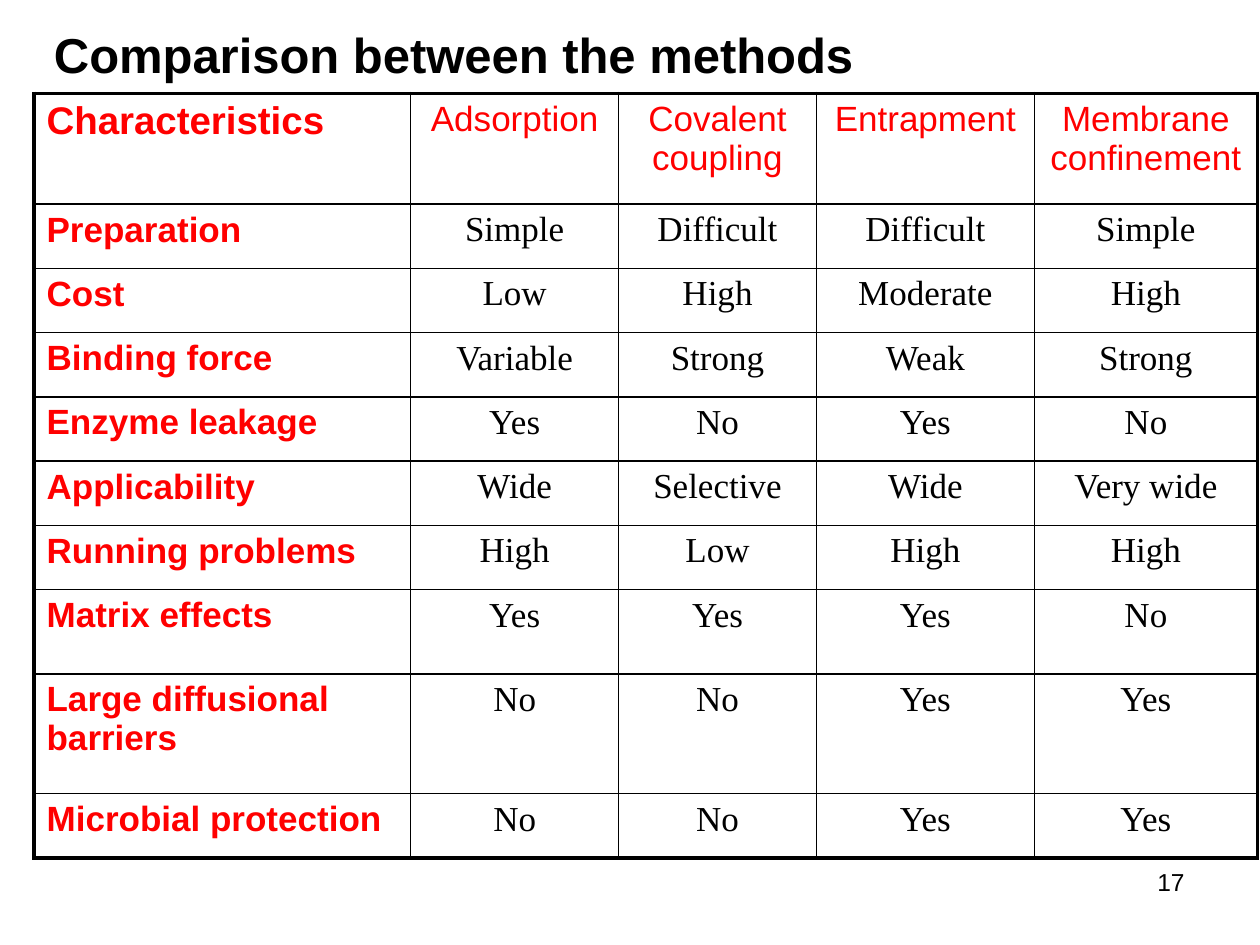
from dataclasses import dataclass

from lxml.etree import SubElement
from pptx import Presentation
from pptx.dml.color import RGBColor
from pptx.enum.text import PP_ALIGN
from pptx.oxml.ns import qn
from pptx.util import Inches, Pt


@dataclass(frozen=True)
class Style:
    font: str
    size: int
    color: str
    bold: bool = False
    align: PP_ALIGN = PP_ALIGN.LEFT


@dataclass(frozen=True)
class Theme:
    title: Style = Style("Arial", 28, "000000", True)
    corner: Style = Style("Arial", 22, "FF0000", True)
    method: Style = Style("Arial", 20, "FF0000", align=PP_ALIGN.CENTER)
    trait: Style = Style("Arial", 20, "FF0000", True)
    value: Style = Style("Times New Roman", 20, "000000", align=PP_ALIGN.CENTER)
    number: Style = Style("Arial", 14, "000000", align=PP_ALIGN.RIGHT)
    paper: str = "FFFFFF"
    rule: str = "000000"
    inner: float = 1
    outer: float = 2.25


@dataclass(frozen=True)
class Box:
    col: int
    row: int
    cols: int
    rows: int


@dataclass(frozen=True)
class Row:
    height: int
    trait: str
    values: tuple[str, ...]


THEME = Theme()
GRID_COLS, GRID_ROWS = 1000, 750
COL_WIDTHS = (299, 165, 157, 173, 177)
ROWS = (
    Row(88, "Characteristics",
        ("Adsorption", "Covalent coupling", "Entrapment", "Membrane confinement")),
    Row(51, "Preparation", ("Simple", "Difficult", "Difficult", "Simple")),
    Row(51, "Cost", ("Low", "High", "Moderate", "High")),
    Row(51, "Binding force", ("Variable", "Strong", "Weak", "Strong")),
    Row(51, "Enzyme leakage", ("Yes", "No", "Yes", "No")),
    Row(51, "Applicability", ("Wide", "Selective", "Wide", "Very wide")),
    Row(51, "Running problems", ("High", "Low", "High", "High")),
    Row(67, "Matrix effects", ("Yes", "Yes", "Yes", "No")),
    Row(95, "Large diffusional barriers", ("No", "No", "Yes", "Yes")),
    Row(51, "Microbial protection", ("No", "No", "Yes", "Yes")),
)

prs = Presentation()
prs.slide_width, prs.slide_height = Inches(10), Inches(7.5)


def across(cols: int) -> int:
    return prs.slide_width * cols // GRID_COLS


def down(rows: int) -> int:
    return prs.slide_height * rows // GRID_ROWS


def place(box: Box) -> tuple[int, int, int, int]:
    return across(box.col), down(box.row), across(box.cols), down(box.rows)


def write(tf, text: str, style: Style, spacing: float = 1.0) -> None:
    p = tf.paragraphs[0]
    p.alignment = style.align
    p.line_spacing = spacing
    r = p.add_run()
    r.text = text
    r.font.name = style.font
    r.font.size = Pt(style.size)
    r.font.bold = style.bold
    r.font.color.rgb = RGBColor.from_string(style.color)


def add_text(s, box: Box, text: str, style: Style, spacing: float = 1.0) -> None:
    tf = s.shapes.add_textbox(*place(box)).text_frame
    tf.word_wrap = True
    write(tf, text, style, spacing)


def set_borders(cell, edges: dict[str, bool]) -> None:
    tc_pr = cell._tc.get_or_add_tcPr()
    for tag, is_outer in edges.items():
        width = THEME.outer if is_outer else THEME.inner
        ln = SubElement(tc_pr, qn(f"a:{tag}"), w=str(Pt(width)))
        fill = SubElement(ln, qn("a:solidFill"))
        SubElement(fill, qn("a:srgbClr"), val=THEME.rule)


def cell_style(i: int, j: int) -> Style:
    if i == 0:
        return THEME.corner if j == 0 else THEME.method
    return THEME.trait if j == 0 else THEME.value


def add_comparison(s, col: int, row: int) -> None:
    box = Box(col, row, sum(COL_WIDTHS), sum(r.height for r in ROWS))
    table = s.shapes.add_table(len(ROWS), len(COL_WIDTHS), *place(box)).table
    table.first_row = table.horz_banding = False
    for column, width in zip(table.columns, COL_WIDTHS):
        column.width = across(width)
    last_row, last_col = len(ROWS) - 1, len(COL_WIDTHS) - 1
    for i, entry in enumerate(ROWS):
        table.rows[i].height = down(entry.height)
        for j, text in enumerate((entry.trait, *entry.values)):
            cell = table.cell(i, j)
            set_borders(cell, {"lnL": j == 0, "lnR": j == last_col,
                               "lnT": i == 0, "lnB": i == last_row})
            cell.fill.solid()
            cell.fill.fore_color.rgb = RGBColor.from_string(THEME.paper)
            write(cell.text_frame, text, cell_style(i, j))


def main() -> None:
    s = prs.slides.add_slide(prs.slide_layouts[6])
    add_text(s, Box(717, 683, 233, 52), "17", THEME.number)
    add_comparison(s, 27, 74)
    add_text(s, Box(33, 3, 883, 69), "Comparison between the methods", THEME.title, 1.25)
    prs.save("out.pptx")


if __name__ == "__main__":
    main()
